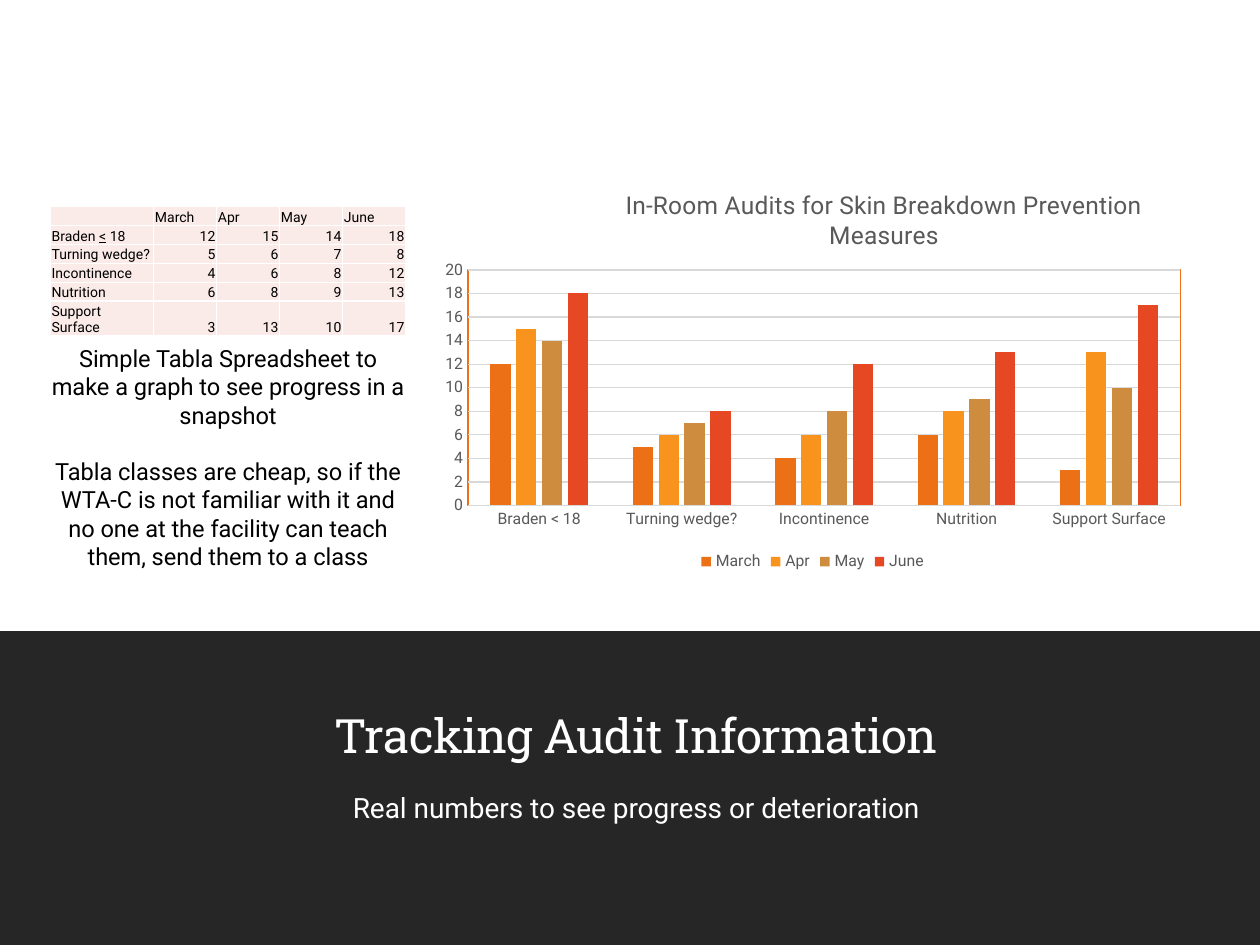
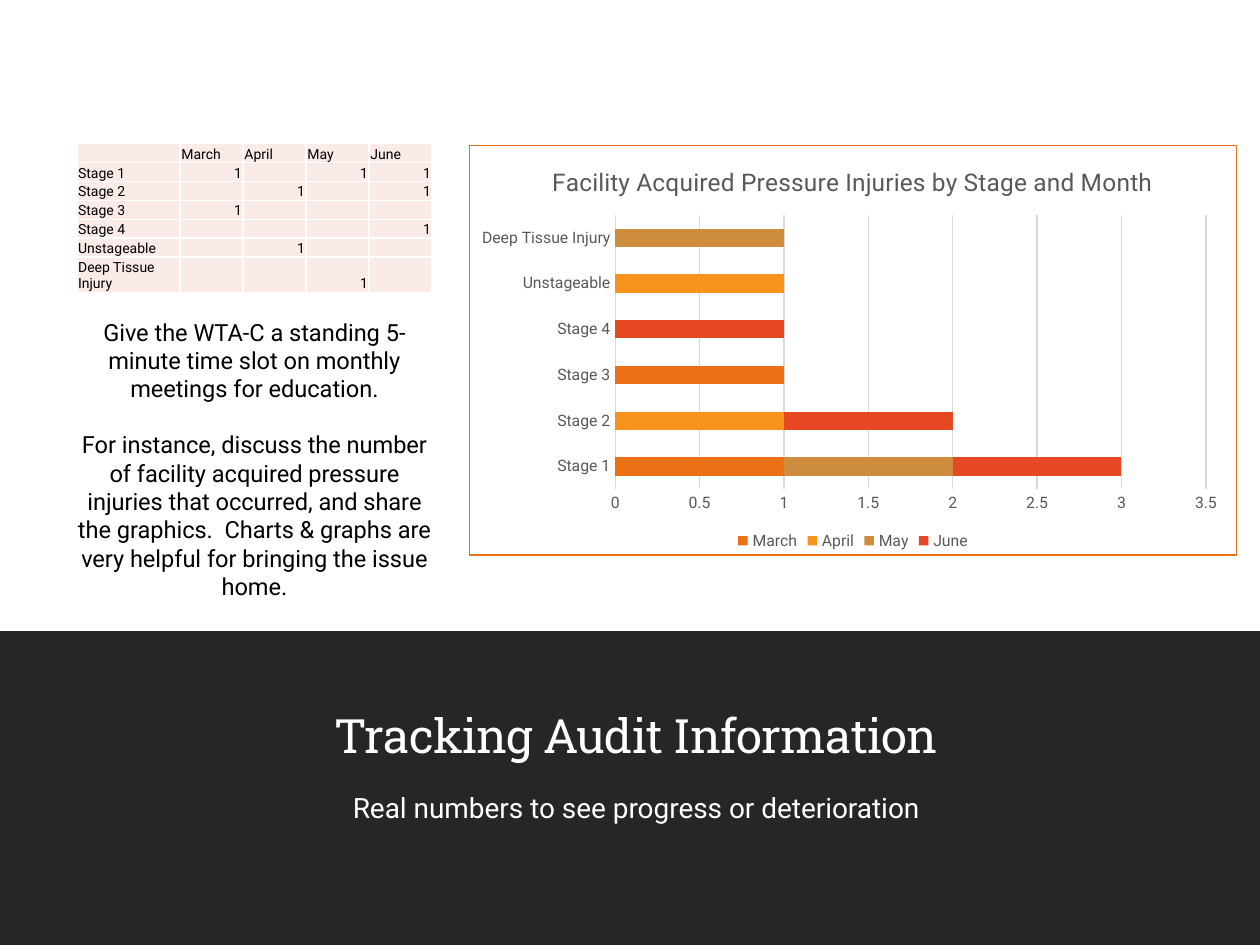
"""Build two audit-tracking slides, each with a table, a chart and a takeaway."""
from lxml.etree import SubElement
from pptx import Presentation
from pptx.chart.data import CategoryChartData
from pptx.dml.color import RGBColor
from pptx.enum.chart import XL_CHART_TYPE, XL_LEGEND_POSITION, XL_TICK_MARK
from pptx.enum.shapes import MSO_SHAPE
from pptx.enum.text import MSO_ANCHOR, PP_ALIGN
from pptx.oxml import parse_xml
from pptx.oxml.ns import nsdecls, qn
from pptx.util import Inches, Pt

WHITE = RGBColor(0xFF, 0xFF, 0xFF)
BLACK = RGBColor(0x00, 0x00, 0x00)
CHARCOAL = RGBColor(0x26, 0x26, 0x26)
BLUSH = RGBColor(0xFB, 0xEB, 0xE8)
GRAY = RGBColor(0x59, 0x59, 0x59)
GRID_GRAY = RGBColor(0xD9, 0xD9, 0xD9)
ORANGE = RGBColor(0xEC, 0x70, 0x16)
MONTH_COLORS = [ORANGE, RGBColor(0xF8, 0x93, 0x1D),
                RGBColor(0xCE, 0x8D, 0x3E), RGBColor(0xE6, 0x48, 0x23)]
BODY_FONT, TITLE_FONT = "Roboto", "Roboto Slab"

deck = Presentation()
deck.slide_width, deck.slide_height = Inches(10), Inches(7.5)
COLUMN, ROW = deck.slide_width / 20, deck.slide_height / 15

AUDITS = [
    {
        "months": ["March", "Apr", "May", "June"],
        "rows": {
            "Braden < 18": [12, 15, 14, 18],
            "Turning wedge?": [5, 6, 7, 8],
            "Incontinence": [4, 6, 8, 12],
            "Nutrition": [6, 8, 9, 13],
            "Support Surface": [3, 13, 10, 17],
        },
        "table_at": (0.8, 3.28),
        "last_row": 0.3,
        "takeaway_at": (0.6, 5.36, 6.04, 3.84),
        "takeaway": [
            "Simple Tabla Spreadsheet to make a graph to see progress in a snapshot",
            "Tabla classes are cheap, so if the WTA-C is not familiar with it and no "
            "one at the facility can teach them, send them to a class",
        ],
        "chart_at": (6.82, 2.58, 12.16, 6.56),
        "chart_title": "In-Room Audits for Skin Breakdown Prevention Measures",
        "title_spot": {"x": 0.25, "y": 0.05},
        "kind": XL_CHART_TYPE.COLUMN_CLUSTERED,
        "gap": 219, "overlap": -27, "top": 20, "step": 2,
        "plot_spot": {"x": 0.05, "y": 0.26, "w": 0.93, "h": 0.57},
        "framed": "plot",
    },
    {
        "months": ["March", "April", "May", "June"],
        "rows": {
            "Stage 1": [1, None, 1, 1],
            "Stage 2": [None, 1, None, 1],
            "Stage 3": [1, None, None, None],
            "Stage 4": [None, None, None, 1],
            "Unstageable": [None, 1, None, None],
            "Deep Tissue Injury": [None, None, 1, None],
        },
        "table_at": (1.22, 2.28),
        "last_row": 0.56,
        "takeaway_at": (0.94, 4.94, 6.2, 4.3),
        "takeaway": [
            "Give the WTA-C a standing 5-minute time slot on monthly meetings for education.",
            "For instance, discuss the number of facility acquired pressure injuries that "
            "occurred, and share the graphics.  Charts & graphs are very helpful for "
            "bringing the issue home.",
        ],
        "chart_at": (7.44, 2.3, 12.2, 6.52),
        "chart_title": "Facility Acquired Pressure Injuries by Stage and Month",
        "title_spot": None,
        "kind": XL_CHART_TYPE.BAR_STACKED,
        "gap": 150, "overlap": 100, "top": 3.5, "step": 0.5,
        "plot_spot": {"x": 0.19, "y": 0.17, "w": 0.77, "h": 0.67},
        "framed": "chart",
    },
]


def add_text(paragraph, text, size, color=BLACK, font=BODY_FONT):
    """Append one formatted run."""
    run = paragraph.add_run()
    run.text = text
    run.font.size, run.font.name, run.font.color.rgb = Pt(size), font, color
    return run


def manual_layout(spot, inner=False):
    """Return a chart layout placed by shares of the chart's size."""
    target = '<c:layoutTarget val="inner"/>' if inner else ""
    modes = '<c:xMode val="edge"/><c:yMode val="edge"/>'
    sizes = "".join(f'<c:{side} val="{share}"/>' for side, share in spot.items())
    return parse_xml(f'<c:layout {nsdecls("c")}><c:manualLayout>{target}{modes}{sizes}'
                     "</c:manualLayout></c:layout>")


for audit in AUDITS:
    slide = deck.slides.add_slide(deck.slide_layouts[6])

    band = slide.shapes.add_shape(MSO_SHAPE.RECTANGLE, 0, round(10.02 * ROW),
                                  deck.slide_width, round(4.98 * ROW))
    band.shadow.inherit = False
    band.fill.solid()
    band.fill.fore_color.rgb = CHARCOAL
    band.line.fill.background()

    for text, top, height, size, font, anchor, spacing in [
        ("Tracking Audit Information", 10.5, 1.62, 27, TITLE_FONT, MSO_ANCHOR.BOTTOM, 0.9),
        ("Real numbers to see progress or deterioration", 12.5, 1.34, 16, BODY_FONT,
         MSO_ANCHOR.TOP, 1.1),
    ]:
        heading = slide.shapes.add_textbox(round(1.8 * COLUMN), round(top * ROW),
                                           round(16.6 * COLUMN), round(height * ROW)).text_frame
        heading.word_wrap = True
        heading.vertical_anchor = anchor
        heading.margin_top = heading.margin_bottom = 0
        line = heading.paragraphs[0]
        line.alignment, line.line_spacing = PP_ALIGN.CENTER, spacing
        run = add_text(line, text, size, WHITE, font)
        if font == TITLE_FONT:
            run.font._element.set("spc", "-40")

    left, top = audit["table_at"]
    grid = [["", *audit["months"]]] + [[name, *counts] for name, counts in audit["rows"].items()]
    table = slide.shapes.add_table(len(grid), 5, round(left * COLUMN), round(top * ROW),
                                   round(5.64 * COLUMN), round(0.3 * len(grid) * ROW)).table
    for position, column in enumerate(table.columns):
        column.width = round((1 if position else 1.64) * COLUMN)
    for row in table.rows:
        row.height = round(0.3 * ROW)
    table.rows[len(grid) - 1].height = round(audit["last_row"] * ROW)
    for row_number, entries in enumerate(grid):
        for column_number, entry in enumerate(entries):
            cell = table.cell(row_number, column_number)
            cell.margin_left = cell.margin_right = cell.margin_top = Inches(0.01)
            cell.margin_bottom = 0
            cell.vertical_anchor = MSO_ANCHOR.BOTTOM
            for edge in ("lnL", "lnR", "lnT", "lnB"):
                border = SubElement(cell._tc.get_or_add_tcPr(), qn(f"a:{edge}"), w=str(Pt(1)))
                paint = SubElement(border, qn("a:solidFill"))
                SubElement(paint, qn("a:srgbClr"), val=str(WHITE))
            cell.fill.solid()
            cell.fill.fore_color.rgb = BLUSH
            line = cell.text_frame.paragraphs[0]
            if row_number and column_number:
                line.alignment = PP_ALIGN.RIGHT
            if entry in ("", None):
                SubElement(line._p, qn("a:endParaRPr"), sz="800")
                continue
            for part in filter(None, str(entry).partition("<")):
                run = add_text(line, part, 8)
                if part == "<":
                    run.font.underline = True

    left, top, width, height = audit["takeaway_at"]
    takeaway = slide.shapes.add_textbox(round(left * COLUMN), round(top * ROW),
                                        round(width * COLUMN), round(height * ROW)).text_frame
    takeaway.word_wrap = True
    for position, text in enumerate(audit["takeaway"]):
        line = takeaway.add_paragraph() if position else takeaway.paragraphs[0]
        line.alignment = PP_ALIGN.CENTER
        line.space_before = Pt(16 * position)
        add_text(line, text, 13.5)

    counts_by_month = CategoryChartData()
    counts_by_month.categories = list(audit["rows"])
    for month, counts in zip(audit["months"], zip(*audit["rows"].values())):
        counts_by_month.add_series(month, counts)
    left, top, width, height = audit["chart_at"]
    chart = slide.shapes.add_chart(audit["kind"], round(left * COLUMN), round(top * ROW),
                                   round(width * COLUMN), round(height * ROW),
                                   counts_by_month).chart
    chart.font.size, chart.font.name, chart.font.color.rgb = Pt(9), BODY_FONT, GRAY

    chart.has_title = True
    title = chart.chart_title
    add_text(title.text_frame.paragraphs[0], audit["chart_title"], 14, GRAY).font.bold = False
    if audit["title_spot"]:
        for old in title._element.findall(qn("c:layout")):
            title._element.remove(old)
        title._element.find(qn("c:tx")).addnext(manual_layout(audit["title_spot"]))

    chart.has_legend = True
    chart.legend.position = XL_LEGEND_POSITION.BOTTOM
    chart.legend.include_in_layout = False

    for axis in (chart.category_axis, chart.value_axis):
        axis.major_tick_mark = axis.minor_tick_mark = XL_TICK_MARK.NONE
    chart.category_axis.format.line.color.rgb = GRID_GRAY
    chart.category_axis.format.line.width = Pt(0.75)
    scale = chart.value_axis
    scale.format.line.fill.background()
    scale.minimum_scale, scale.maximum_scale = 0, audit["top"]
    scale.major_unit = audit["step"]
    scale.has_major_gridlines = True
    scale.major_gridlines.format.line.color.rgb = GRID_GRAY
    scale.major_gridlines.format.line.width = Pt(0.75)

    bars = chart.plots[0]
    bars.vary_by_categories = False
    bars.gap_width, bars.overlap = audit["gap"], audit["overlap"]
    for series, color in zip(bars.series, MONTH_COLORS):
        series.format.fill.solid()
        series.format.fill.fore_color.rgb = color

    plot_area = chart._chartSpace.chart.plotArea
    for old in plot_area.findall(qn("c:layout")):
        plot_area.remove(old)
    plot_area.insert(0, manual_layout(audit["plot_spot"], inner=True))
    for part, last_child in (("plot", plot_area[-1]), ("chart", chart._chartSpace.chart)):
        stroke = (f'<a:solidFill><a:srgbClr val="{ORANGE}"/></a:solidFill>'
                  if part == audit["framed"] else "<a:noFill/>")
        last_child.addnext(parse_xml(f'<c:spPr {nsdecls("c", "a")}><a:noFill/>'
                                     f'<a:ln w="{Pt(0.75)}">{stroke}</a:ln></c:spPr>'))

deck.save("out.pptx")
